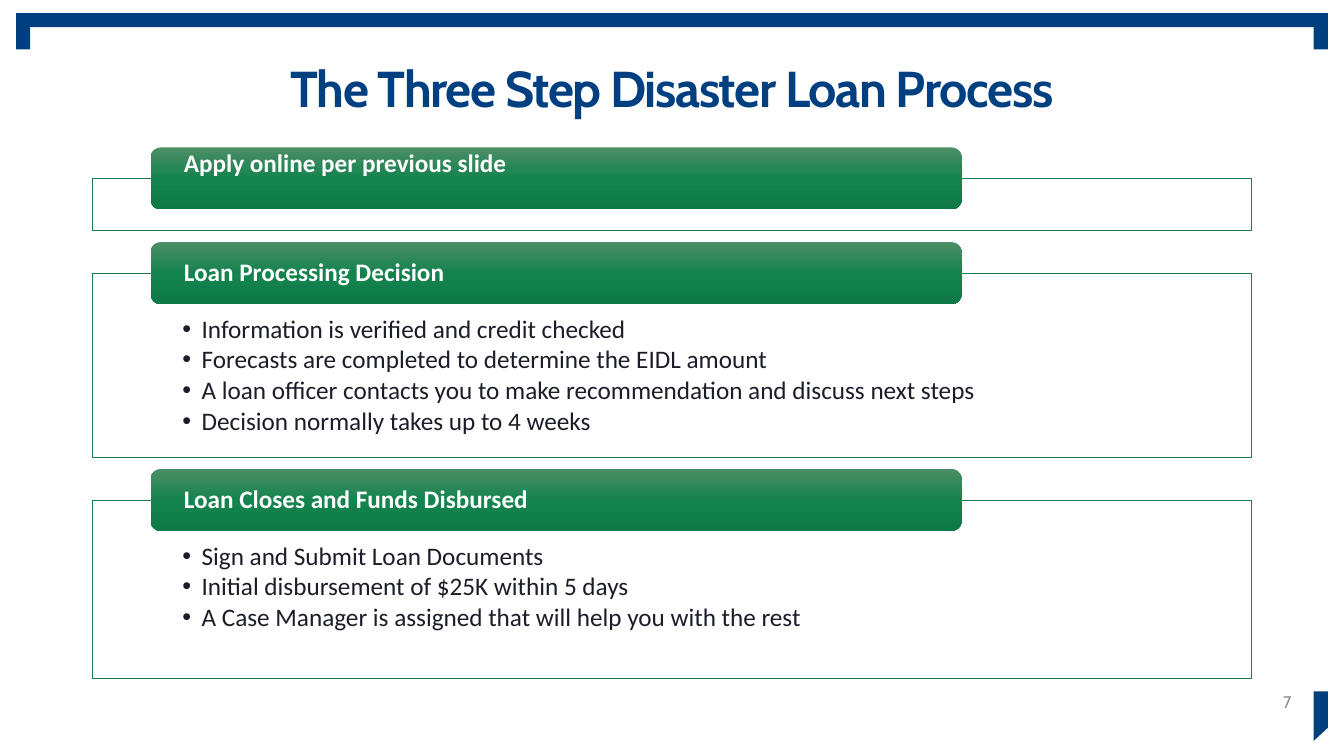
from dataclasses import dataclass

from lxml import etree
from pptx import Presentation
from pptx.dml.color import RGBColor
from pptx.enum.shapes import MSO_SHAPE
from pptx.enum.text import MSO_ANCHOR, PP_ALIGN
from pptx.oxml.ns import qn
from pptx.util import Inches, Pt

RECT, ROUND = MSO_SHAPE.RECTANGLE, MSO_SHAPE.ROUNDED_RECTANGLE
TOP, MIDDLE = MSO_ANCHOR.TOP, MSO_ANCHOR.MIDDLE
LEFT, CENTER, RIGHT = PP_ALIGN.LEFT, PP_ALIGN.CENTER, PP_ALIGN.RIGHT
WIDTH, HEIGHT = Inches(13.33), Inches(7.5)


@dataclass(frozen=True)
class Theme:
    navy: str = "003F80"
    white: str = "FFFFFF"
    ink: str = "1B1E29"
    gray: str = "8D8D8E"
    outline: str = "197E4E"
    gradient: tuple = ("4D8E67", "14834E", "0D7946")
    heading_font: str = "Cabin"
    body_font: str = "Calibri"
    title_size: float = 36
    body_size: float = 18
    number_size: float = 12


@dataclass(frozen=True)
class Area:
    """Percent of the slide's width and height."""
    x: float
    y: float
    w: float
    h: float

    def emu(self) -> tuple:
        return across(self.x), down(self.y), across(self.w), down(self.h)


@dataclass(frozen=True)
class Step:
    heading: str
    height: float
    bullets: tuple = ()
    anchor: MSO_ANCHOR = MIDDLE


THEME = Theme()
MARGIN, FIRST_TOP, GAP = 6.9, 23.6, 5.6
BOX_WIDTH = 100 - 2 * MARGIN
TAB_HEIGHT = 8.2
EDGE_X, EDGE_Y, POST_WIDTH = 1.2, 1.73, 1.05
RIGHT_POST = 100 - EDGE_X - POST_WIDTH

STEPS = (
    Step("Apply online per previous slide", 6.93, anchor=TOP),
    Step("Loan Processing Decision", 24.4, (
        "Information is verified and credit checked",
        "Forecasts are completed to determine the EIDL amount",
        "A loan officer contacts you to make recommendation and discuss next steps",
        "Decision normally takes up to 4 weeks",
    )),
    Step("Loan Closes and Funds Disbursed", 23.6, (
        "Sign and Submit Loan Documents",
        "Initial disbursement of $25K within 5 days",
        "A Case Manager is assigned that will help you with the rest",
    )),
)


def across(percent: float) -> int:
    return round(WIDTH * percent / 100)


def down(percent: float) -> int:
    return round(HEIGHT * percent / 100)


def rgb(color: str) -> RGBColor:
    return RGBColor.from_string(color)


def add_block(slide, kind, area: Area, fill: str):
    s = slide.shapes.add_shape(kind, *area.emu())
    s.shadow.inherit = False
    s.fill.solid()
    s.fill.fore_color.rgb = rgb(fill)
    s.line.fill.background()
    return s


def set_frame(tf, anchor, left: float, top: float, right: float, bottom: float) -> None:
    tf.word_wrap = True
    tf.vertical_anchor = anchor
    tf.margin_left, tf.margin_top = Inches(left), Inches(top)
    tf.margin_right, tf.margin_bottom = Inches(right), Inches(bottom)


def write(p, text: str, font: str, size: float, color: str,
          bold: bool = False, align=LEFT) -> None:
    p.text = text
    p.alignment = align
    p.line_spacing = 0.9
    for r in p.runs:
        r.font.name, r.font.size, r.font.bold = font, Pt(size), bold
        r.font.color.rgb = rgb(color)


def add_bullet(p) -> None:
    pPr = p._p.get_or_add_pPr()
    pPr.set("marL", str(Inches(0.19)))
    pPr.set("indent", str(-Inches(0.19)))
    etree.SubElement(pPr, qn("a:buFont")).set("typeface", "Arial")
    etree.SubElement(pPr, qn("a:buChar")).set("char", "•")


def fill_gradient(s, colors: tuple) -> None:
    s.fill.gradient()
    s.fill.gradient_angle = 270
    stops = s._element.spPr.find(qn("a:gradFill")).find(qn("a:gsLst"))
    for stop in list(stops):
        stops.remove(stop)
    for i, color in enumerate(colors):
        stop = etree.SubElement(stops, qn("a:gs"))
        stop.set("pos", str(100000 * i // (len(colors) - 1)))
        etree.SubElement(stop, qn("a:srgbClr")).set("val", color)


def add_frame(slide) -> None:
    for area in (
        Area(EDGE_X, EDGE_Y, 100 - 2 * EDGE_X, 1.87),
        Area(EDGE_X, EDGE_Y, POST_WIDTH, 4.8),
        Area(RIGHT_POST, EDGE_Y, POST_WIDTH, 4.8),
    ):
        add_block(slide, RECT, area, THEME.navy)

    # Cut corner at the bottom right
    x1, x2 = across(RIGHT_POST), across(RIGHT_POST + POST_WIDTH)
    fb = slide.shapes.build_freeform(x1, down(91.47))
    fb.add_line_segments([(x2, down(91.47)), (x2, down(96.27)), (x1, down(98))])
    s = fb.convert_to_shape()
    s.shadow.inherit = False
    s.fill.solid()
    s.fill.fore_color.rgb = rgb(THEME.navy)
    s.line.fill.background()


def add_label(slide, area: Area, text: str, size: float, color: str,
              bold: bool, align):
    tf = slide.shapes.add_textbox(*area.emu()).text_frame
    set_frame(tf, MIDDLE, 0.1, 0.05, 0.1, 0.05)
    write(tf.paragraphs[0], text, THEME.heading_font, size, color, bold, align)
    return tf


def add_step(slide, step: Step, top: float) -> None:
    # Outlined box with bullets
    s = add_block(slide, RECT, Area(MARGIN, top, BOX_WIDTH, step.height), THEME.white)
    color = s._element.spPr.find(qn("a:solidFill"))[0]
    etree.SubElement(color, qn("a:alpha")).set("val", "90000")
    s.line.color.rgb = rgb(THEME.outline)
    s.line.width = Pt(0.5)
    tf = s.text_frame
    set_frame(tf, TOP, 0.89, 0.43, 0.89, 0.14)
    for i, text in enumerate(step.bullets):
        p = tf.add_paragraph() if i else tf.paragraphs[0]
        write(p, text, THEME.body_font, THEME.body_size, THEME.ink)
        p.space_after = Pt(2.4)
        add_bullet(p)

    # Heading tab, centred on the top edge of the box
    tab = Area(MARGIN + 0.05 * BOX_WIDTH, top - TAB_HEIGHT / 2,
               0.7 * BOX_WIDTH, TAB_HEIGHT)
    s = add_block(slide, ROUND, tab, THEME.outline)
    fill_gradient(s, THEME.gradient)
    set_frame(s.text_frame, step.anchor, 0.3, 0, 0.3, 0)
    write(s.text_frame.paragraphs[0], step.heading, THEME.body_font,
          THEME.body_size, THEME.white, True)


def main() -> None:
    prs = Presentation()
    prs.slide_width, prs.slide_height = WIDTH, HEIGHT
    slide = prs.slides.add_slide(prs.slide_layouts[6])
    add_frame(slide)

    # Title and slide number
    tf = add_label(slide, Area(MARGIN, 7.73, BOX_WIDTH, 8.67),
                   "The Three Step Disaster Loan Process",
                   THEME.title_size, THEME.navy, True, CENTER)
    tf.paragraphs[0].runs[0]._r.get_or_add_rPr().set("spc", "-100")
    add_label(slide, Area(74.34, 90.27, 22.5, 5.33), "7",
              THEME.number_size, THEME.gray, False, RIGHT)

    # Steps, stacked with equal gaps
    top = FIRST_TOP
    for step in STEPS:
        add_step(slide, step, top)
        top += step.height + GAP
    prs.save("out.pptx")


if __name__ == "__main__":
    main()
